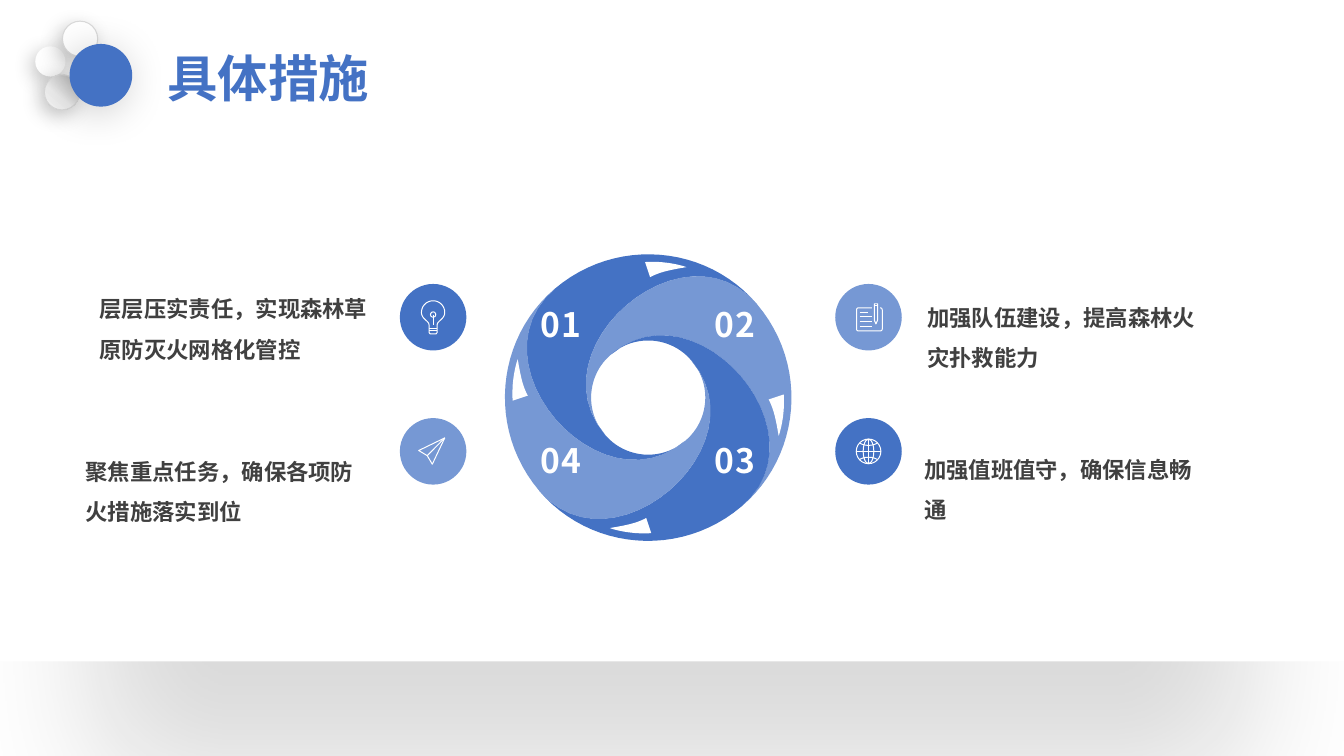
from dataclasses import dataclass

from lxml.etree import SubElement
from pptx import Presentation
from pptx.dml.color import RGBColor
from pptx.enum.shapes import MSO_CONNECTOR, MSO_SHAPE
from pptx.enum.text import MSO_ANCHOR, MSO_AUTO_SIZE, PP_ALIGN
from pptx.oxml.ns import qn
from pptx.util import Pt

FONT = "Noto Sans CJK SC"
BLUE, LIGHT, WHITE, DARK, EDGE = "4472C4", "7698D4", "FFFFFF", "404040", "D9D9D9"
HUB = (463, 284)
STROKE = 0.7

# An outline is a start point, then points (straight) or six numbers (Bezier).
Outline = list[tuple[float, ...]]


@dataclass
class Shade:
    color: str
    alpha: int
    blur: float
    dist: float
    angle: int
    scale: int = 100


@dataclass
class Ball:
    x: float
    y: float
    size: float
    fill: str
    edge: str | None
    shade: Shade


@dataclass
class Icon:
    rings: list[tuple[float, float, float, float]]  # centre x, y and radii
    lines: list[tuple[float, float, float, float]]
    closed: list[Outline]
    open: list[Outline]


@dataclass
class Topic:
    number: str
    num_at: tuple[float, float]
    disc_at: tuple[float, float]
    text_at: tuple[float, float]
    text: str
    fill: str
    icon: Icon


BLADE: Outline = [
    (77.8, -66.6), (41.8, -109.1, -23, -114.8, -66.6, -77.8),
    (-128.2, -25.6, -34.6, 82.4, 26.3, 31), (9.4, 45.7, -16.6, 43.6, -31, 26.3),
    (-82.1, -34.9, 25.2, -127.8, 77.8, -66.6)]
ARROW: Outline = [
    (27.4, -93.2), (20.9, -95.4, 10.1, -97.6, -2.2, -96.8), (1.4, -86),
    (7.9, -89.6, 15.1, -91.1, 27.4, -93.2)]

BULB = Icon(
    [(0, -1.9, 1.9, 1.9)],
    [(0, -1.9, 0, 5.3), (-2.9, 8.1, 2.9, 8.1), (-2.9, 9.7, 2.9, 9.7)],
    [[(-2.9, 5.6), (-2.9, 2.5, -8.3, 1.5, -8.3, -3.4),
      (-8.3, -8, -4.6, -11.7, 0, -11.7), (4.6, -11.7, 8.3, -8, 8.3, -3.4),
      (8.3, 1.5, 2.9, 2.5, 2.9, 5.6), (2.9, 11), (2, 12), (-2, 12), (-2.9, 11)]], [])
NOTE = Icon(
    [],
    [(-6.3, -3.1, -0.4, -3.1), (-6.3, -0.2, 2.2, -0.2), (-6.3, 2.9, 2.4, 2.9),
     (-6.3, 6.3, 2.4, 6.3), (4.2, -8.5, 6.4, -8.5)],
    [[(4.2, -9.6), (6.4, -9.6), (6.4, 2.3), (5.3, 4.8), (4.2, 2.3)]],
    [[(2.4, -6.7), (-7, -6.7), (-8, -6.7, -8.6, -6, -8.6, -5.2), (-8.6, 8.4),
      (-8.6, 9.2, -8, 9.8, -7, 9.8), (8.2, 9.8), (9.2, 9.8, 9.8, 9.2, 9.8, 8.4),
      (9.8, -5.2), (9.8, -6, 9.2, -6.7, 8.2, -6.7)]])
GLOBE = Icon(
    [(0, 0, 8.8, 8.8), (0, 0, 3.8, 8.8)],
    [(0, -8.8, 0, 8.8), (-8.8, 0, 8.8, 0)], [],
    [[(-6.3, -5.9), (-3, -3.7, 3, -3.7, 6.3, -5.9)],
     [(-6.3, 5.9), (-3, 3.7, 3, 3.7, 6.3, 5.9)]])
PLANE = Icon(
    [], [(-4.2, 3.1, 8.3, -9.6)],
    [[(-10.3, -0.6), (8.3, -9.6), (-0.6, 9.2), (-4.2, 3.1)]], [])

LEFT, RIGHT, TOP, LOW = 309.4, 620.4, 226.6, 322.4
TOPICS = [
    Topic("01", (376.6, 216.7), (LEFT, TOP), (64, 198),
          "层层压实责任，实现森林草原防灭火网格化管控", BLUE, BULB),
    Topic("02", (501.1, 216.7), (RIGHT, TOP), (655.2, 204),
          "加强队伍建设，提高森林火灾扑救能力", LIGHT, NOTE),
    Topic("03", (501.1, 313.9), (RIGHT, LOW), (653, 312.5),
          "加强值班值守，确保信息畅通", BLUE, GLOBE),
    Topic("04", (376.6, 313.9), (LEFT, LOW), (54, 314),
          "聚焦重点任务，确保各项防火措施落实到位", LIGHT, PLANE),
]
SOFT = Shade("000000", 22, 14, 5, 130)
BALLS = [
    Ball(25.2, 33.1, 21.6, WHITE, None, SOFT),
    Ball(31.7, 53.3, 25.2, "", EDGE, SOFT),
    Ball(44.6, 15.1, 25.2, WHITE, EDGE, SOFT),
    Ball(49.7, 31.4, 44.8, BLUE, None, Shade("000000", 20, 30, 5, 130)),
]
GRADE = [(0, "BFBFBF"), (18, "C6C6C6"), (61, "EEEEEE"), (100, "F5F5F5")]


def tint(code: str) -> RGBColor:
    return RGBColor.from_string(code)


def paint(shape, fill: str | None, edge: str | None = None, width: float = 0.75) -> None:
    shape.shadow.inherit = False
    if fill:
        shape.fill.solid()
        shape.fill.fore_color.rgb = tint(fill)
    else:
        shape.fill.background()
    if edge:
        shape.line.color.rgb = tint(edge)
        shape.line.width = Pt(width)
    else:
        shape.line.fill.background()


def cast(shape, shade: Shade) -> None:
    """Add an outer shadow."""
    effects = shape.element.spPr.find(qn("a:effectLst"))
    outer = SubElement(effects, qn("a:outerShdw"), blurRad=str(Pt(shade.blur)),
                       dist=str(Pt(shade.dist)), dir=str(shade.angle * 60000),
                       sx=str(shade.scale * 1000), sy=str(shade.scale * 1000),
                       algn="ctr", rotWithShape="0")
    color = SubElement(outer, qn("a:srgbClr"), val=shade.color)
    SubElement(color, qn("a:alpha"), val=str(shade.alpha * 1000))


def grade(shape) -> None:
    """Swap the empty fill for the grey gradient."""
    props = shape.element.spPr
    blank = props.find(qn("a:noFill"))
    fill = SubElement(props, qn("a:gradFill"))
    props.replace(blank, fill)
    stops = SubElement(fill, qn("a:gsLst"))
    for place, code in GRADE:
        stop = SubElement(stops, qn("a:gs"), pos=str(place * 1000))
        SubElement(stop, qn("a:srgbClr"), val=code)
    SubElement(fill, qn("a:lin"), ang=str(130 * 60000), scaled="0")


def oval(slide, x: float, y: float, w: float, h: float):
    return slide.shapes.add_shape(MSO_SHAPE.OVAL, Pt(x), Pt(y), Pt(w), Pt(h))


def trace(outline: Outline, steps: int = 24) -> list[tuple[float, float]]:
    """Turn an outline into a chain of points."""
    chain = [outline[0]]
    for part in outline[1:]:
        if len(part) == 2:
            chain.append(part)
            continue
        ends = [chain[-1], part[:2], part[2:4], part[4:]]
        for step in range(1, steps + 1):
            t = step / steps
            parts = ((1 - t) ** 3, 3 * t * (1 - t) ** 2, 3 * t * t * (1 - t), t ** 3)
            chain.append(tuple(sum(k * p[axis] for k, p in zip(parts, ends))
                               for axis in (0, 1)))
    return chain


def form(slide, outline: Outline, at: tuple[float, float], turns: int = 0, close: bool = True):
    """Build an outline around a centre, after some quarter turns."""
    chain = trace(outline)
    for _ in range(turns):
        chain = [(-y, x) for x, y in chain]
    spots = [(Pt(at[0] + x), Pt(at[1] + y)) for x, y in chain]
    maker = slide.shapes.build_freeform(*spots[0], scale=1.0)
    maker.add_line_segments(spots[1:], close=close)
    return maker.convert_to_shape()


def write(frame, text: str, size: float, color: str, space: float = 1.0, gap: int = 0) -> None:
    para = frame.paragraphs[0]
    para.line_spacing = space
    run = para.add_run()
    run.text = text
    run.font.size, run.font.bold, run.font.name = Pt(size), True, FONT
    run.font.color.rgb = tint(color)
    props = run.font._element
    SubElement(props, qn("a:ea"), typeface=FONT)
    if gap:
        props.set("spc", str(gap * 100))


def label(slide, x: float, y: float, w: float, h: float):
    frame = slide.shapes.add_textbox(Pt(x), Pt(y), Pt(w), Pt(h)).text_frame
    frame.word_wrap = True
    frame.auto_size = MSO_AUTO_SIZE.SHAPE_TO_FIT_TEXT
    return frame


def draw(slide, icon: Icon, at: tuple[float, float]) -> None:
    cx, cy = at
    for x, y, rx, ry in icon.rings:
        paint(oval(slide, cx + x - rx, cy + y - ry, 2 * rx, 2 * ry), None, WHITE, STROKE)
    for x1, y1, x2, y2 in icon.lines:
        line = slide.shapes.add_connector(MSO_CONNECTOR.STRAIGHT, Pt(cx + x1), Pt(cy + y1),
                                          Pt(cx + x2), Pt(cy + y2))
        line.line.color.rgb, line.line.width = tint(WHITE), Pt(STROKE)
        SubElement(line.element.spPr, qn("a:effectLst"))
    for outline in icon.closed:
        paint(form(slide, outline, at), None, WHITE, STROKE)
    for outline in icon.open:
        paint(form(slide, outline, at, close=False), None, WHITE, STROKE)


def show(slide, topic: Topic) -> None:
    frame = label(slide, *topic.num_at, 48.2, 33.1)
    frame.vertical_anchor = MSO_ANCHOR.BOTTOM
    frame.paragraphs[0].alignment = PP_ALIGN.CENTER
    write(frame, topic.number, 24, WHITE, 0.9, 1)
    x, y = topic.disc_at
    paint(oval(slide, x - 23.75, y - 23.75, 47.5, 47.5), topic.fill)
    draw(slide, topic.icon, topic.disc_at)
    write(label(slide, *topic.text_at, 219.6, 65.5), topic.text, 16, DARK, 1.5)


def main() -> None:
    deck = Presentation()
    deck.slide_width, deck.slide_height = Pt(960), Pt(540)
    slide = deck.slides.add_slide(deck.slide_layouts[5])
    panel = slide.shapes.add_shape(MSO_SHAPE.RECTANGLE, 0, Pt(103), Pt(960), Pt(369.4))
    paint(panel, WHITE)
    cast(panel, Shade("0D0D0D", 15, 100, 108, 90, 86))
    for ball in BALLS:
        shape = oval(slide, ball.x, ball.y, ball.size, ball.size)
        paint(shape, ball.fill, ball.edge)
        if not ball.fill:
            grade(shape)
        cast(shape, ball.shade)
    title = slide.shapes.title
    title.left, title.top, title.width, title.height = Pt(112.3), Pt(30.2), Pt(159.1), Pt(51.1)
    frame = title.text_frame
    frame.word_wrap, frame.vertical_anchor = False, MSO_ANCHOR.TOP
    frame.auto_size = MSO_AUTO_SIZE.SHAPE_TO_FIT_TEXT
    frame.paragraphs[0].alignment = PP_ALIGN.LEFT
    write(frame, "具体措施", 36, BLUE)
    for turn in range(4):
        paint(form(slide, BLADE, HUB, turn), LIGHT if turn % 2 else BLUE)
        paint(form(slide, ARROW, HUB, turn), WHITE)
    for topic in TOPICS:
        show(slide, topic)
    deck.save("out.pptx")


if __name__ == "__main__":
    main()
